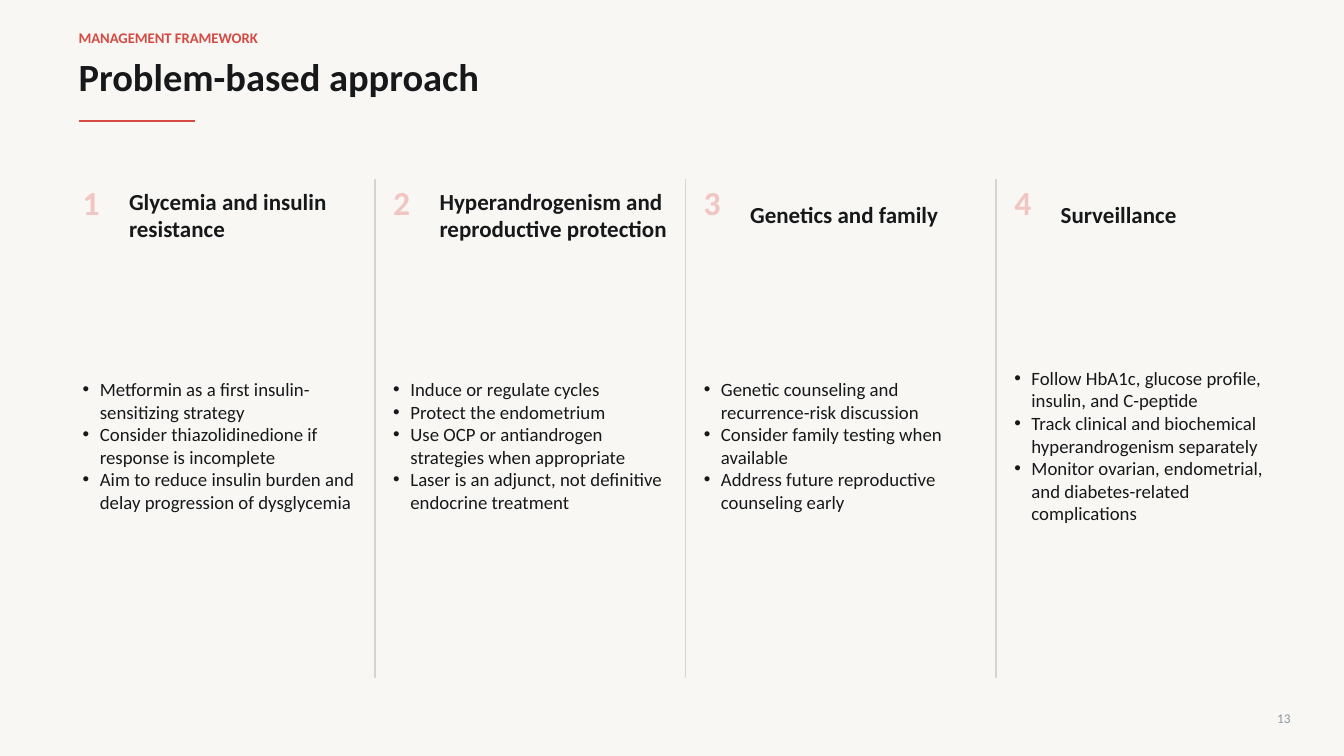
from lxml import etree
from pptx import Presentation
from pptx.dml.color import RGBColor
from pptx.enum.shapes import MSO_CONNECTOR
from pptx.enum.text import MSO_ANCHOR, MSO_AUTO_SIZE, PP_ALIGN
from pptx.oxml.ns import qn
from pptx.util import Inches, Pt

LEFT, RIGHT = PP_ALIGN.LEFT, PP_ALIGN.RIGHT
MIDDLE, NO_FIT = MSO_ANCHOR.MIDDLE, MSO_AUTO_SIZE.NONE
STRAIGHT = MSO_CONNECTOR.STRAIGHT

KICKER = "MANAGEMENT FRAMEWORK"
TITLE = "Problem-based approach"
PAGE = "13"
COLUMNS = [
    ("Glycemia and insulin resistance", [
        "Metformin as a first insulin-sensitizing strategy",
        "Consider thiazolidinedione if response is incomplete",
        "Aim to reduce insulin burden and delay progression of dysglycemia"]),
    ("Hyperandrogenism and reproductive protection", [
        "Induce or regulate cycles",
        "Protect the endometrium",
        "Use OCP or antiandrogen strategies when appropriate",
        "Laser is an adjunct, not definitive endocrine treatment"]),
    ("Genetics and family", [
        "Genetic counseling and recurrence-risk discussion",
        "Consider family testing when available",
        "Address future reproductive counseling early"]),
    ("Surveillance", [
        "Follow HbA1c, glucose profile, insulin, and C-peptide",
        "Track clinical and biochemical hyperandrogenism separately",
        "Monitor ovarian, endometrial, and diabetes-related complications"]),
]

COLORS = {"bg": "F8F7F4", "accent": "D54A42", "ink": "16181A",
          "rule": "D9D3CD", "number": "F1C6C2", "page": "8F969F"}
STYLES = {
    "kicker": {"size": Pt(10.5), "bold": True, "color": "accent"},
    "title": {"size": Pt(27.5), "bold": True, "color": "ink"},
    "number": {"size": Pt(24), "bold": True, "color": "number"},
    "heading": {"size": Pt(16.4), "bold": True, "color": "ink"},
    "list": {"size": Pt(13.4), "bold": False, "color": "ink"},
    "page": {"size": Pt(9.5), "bold": False, "color": "page"},
}
COL_X, COL_STEP, DIVIDER_X = 0.82, 3.08, 3.72


def rgb(name):
    return RGBColor.from_string(COLORS[name])


def add_bullet(p):
    pPr = p._p.get_or_add_pPr()
    pPr.set("marL", str(Inches(0.17)))
    pPr.set("indent", str(-Inches(0.17)))
    etree.SubElement(pPr, qn("a:buFont")).set("typeface", "Arial")
    etree.SubElement(pPr, qn("a:buChar")).set("char", "•")


def fill_text(sp, box, lines, style, align=LEFT, bullets=False):
    sp.left, sp.top, sp.width, sp.height = [Inches(v) for v in box]
    tf = sp.text_frame
    frame = {"word_wrap": True, "auto_size": NO_FIT, "vertical_anchor": MIDDLE,
             "margin_left": 0, "margin_right": 0, "margin_top": 0, "margin_bottom": 0}
    for name, value in frame.items():
        setattr(tf, name, value)
    for i, line in enumerate(lines):
        p = tf.add_paragraph() if i else tf.paragraphs[0]
        if bullets:
            add_bullet(p)
        p.alignment = align
        p.space_before = Pt(0)
        r = p.add_run()
        r.text = line
        r.font.name = "Calibri"
        for name, value in STYLES[style].items():
            if name == "color":
                r.font.color.rgb = rgb(value)
            else:
                setattr(r.font, name, value)


def add_text(s, box, text, style, align=LEFT):
    sp = s.shapes.add_textbox(0, 0, 0, 0)
    fill_text(sp, box, [text], style, align)


def add_rule(s, ends, color, width):
    line = s.shapes.add_connector(STRAIGHT, *[Inches(v) for v in ends])
    line.line.color.rgb = rgb(color)
    line.line.width = Pt(width)
    etree.SubElement(line._element.spPr, qn("a:effectLst"))


def main():
    prs = Presentation()
    prs.slide_width, prs.slide_height = Inches(13.33), Inches(7.5)
    s = prs.slides.add_slide(prs.slide_layouts.get_by_name("Comparison"))
    s.background.fill.solid()
    s.background.fill.fore_color.rgb = rgb("bg")
    title, *bodies = s.placeholders

    add_text(s, (0.78, 0.28, 3.2, 0.18), KICKER, "kicker")
    fill_text(title, (0.78, 0.52, 7.8, 0.48), [TITLE], "title")
    add_rule(s, (0.78, 1.2, 1.93, 1.2), "accent", 1.6)

    for i, ((heading, items), body) in enumerate(zip(COLUMNS, bodies)):
        x = COL_X + i * COL_STEP
        add_text(s, (x, 1.82, 0.36, 0.36), str(i + 1), "number")
        add_text(s, (x + 0.46, 1.82, 2.26, 0.62), heading, "heading")
        fill_text(body, (x, 2.62, 2.72, 3.6), items, "list", bullets=True)
        if i < len(COLUMNS) - 1:
            divider = DIVIDER_X + i * COL_STEP
            add_rule(s, (divider, 1.78, divider, 6.73), "rule", 1)

    add_text(s, (12.45, 7.03, 0.35, 0.18), PAGE, "page", RIGHT)
    prs.save("out.pptx")


if __name__ == "__main__":
    main()
